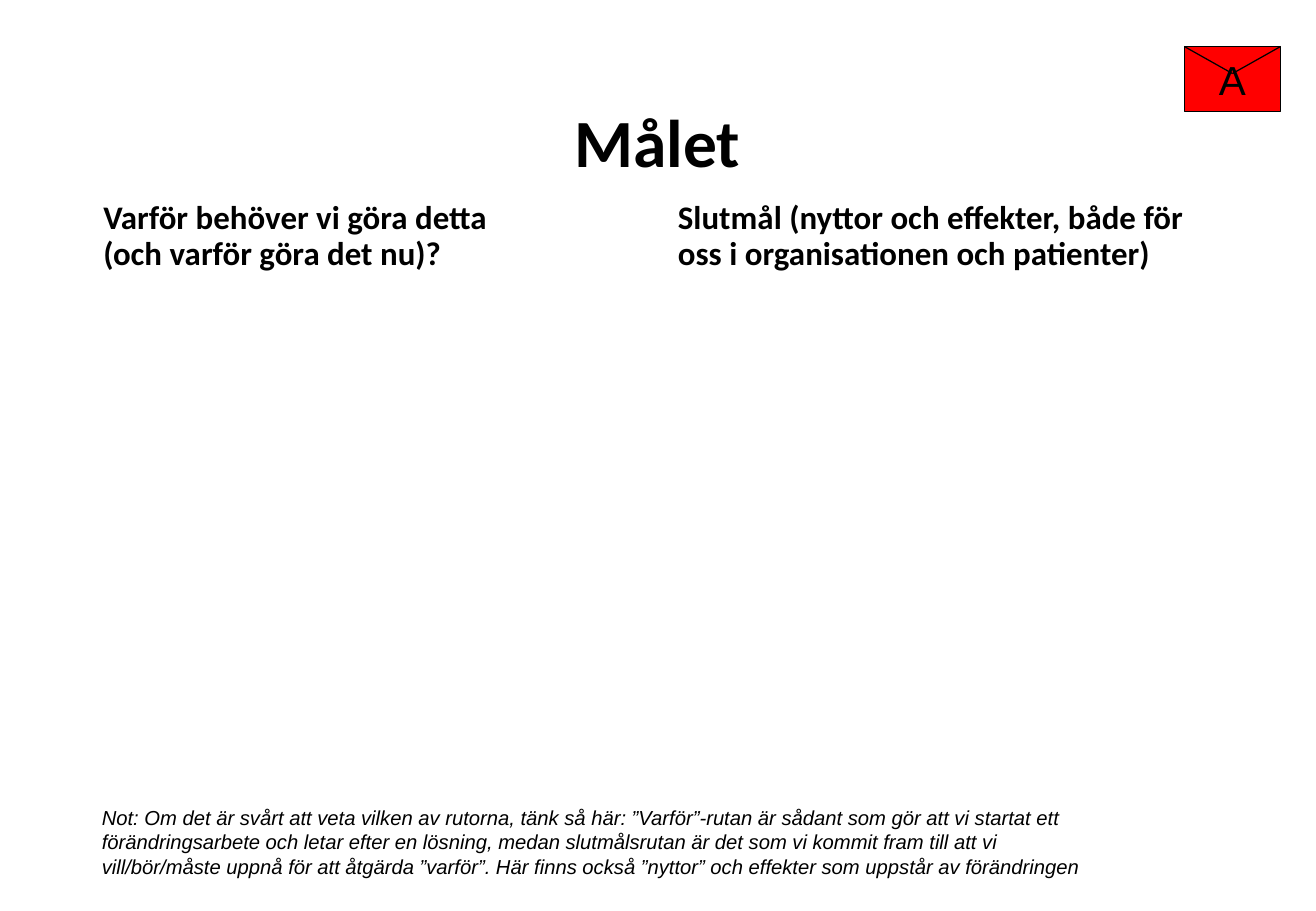
"""Builds the goal slide with two headed areas, a note and an envelope mark."""
from lxml import etree
from pptx import Presentation
from pptx import util as u
from pptx.dml.color import RGBColor
from pptx.enum import shapes, text
from pptx.oxml.ns import qn

GOAL = "Målet"
HEADINGS = [
    ("Varför behöver vi göra detta\v(och varför göra det nu)?", (54, 112.3, 329.8, 52.6)),
    ("Slutmål (nyttor och effekter, både för oss i organisationen och patienter)",
     (394.6, 112.3, 331.9, 52.6)),
]
NOTE = ("Not: Om det är svårt att veta vilken av rutorna, tänk så här: ”Varför”-rutan är sådant "
        "som gör att vi startat ett förändringsarbete och letar efter en lösning, medan "
        "slutmålsrutan är det som vi kommit fram till att vi vill/bör/måste uppnå för att "
        "åtgärda ”varför”. Här finns också ”nyttor” och effekter som uppstår av förändringen")
LETTER = "A"
GOAL_BOX = (53.3, 67.7, 672.5, 37.4)
NOTE_BOX = (53.3, 473.8, 614.2, 51.1)
ENVELOPE_BOX = (702, 27.6, 57, 38.4)
FLAP_DEPTH = 16

MIDDLE, BOTTOM, TOP = text.MSO_ANCHOR.MIDDLE, text.MSO_ANCHOR.BOTTOM, text.MSO_ANCHOR.TOP
CENTER, LEFT = text.PP_ALIGN.CENTER, text.PP_ALIGN.LEFT
THEME = {
    "ink": RGBColor(0, 0, 0),
    "envelope": RGBColor(255, 0, 0),
    "line": u.Pt(0.75),
    "goal": {"name": "Calibri", "size": u.Pt(40), "bold": True},
    "heading": {"name": "Calibri", "size": u.Pt(19.5), "bold": True},
    "note": {"name": "Arial", "size": u.Pt(12), "italic": True},
    "letter": {"name": "Arial", "size": u.Pt(24)},
}


def points(values):
    return [u.Pt(value) for value in values]


def apply(target, values):
    for key, value in values.items():
        setattr(target, key, value)


def place(part, box):
    apply(part, dict(zip(("left", "top", "width", "height"), points(box))))


def write(part, words, style, anchor, align, spacing=1.0, fit=text.MSO_AUTO_SIZE.NONE):
    frame = part.text_frame
    apply(frame, {"text": words, "word_wrap": True, "vertical_anchor": anchor, "auto_size": fit})
    paragraph = frame.paragraphs[0]
    apply(paragraph, {"alignment": align, "line_spacing": spacing, "space_before": u.Pt(0)})
    for run in paragraph.runs:
        apply(run.font, THEME[style])
        run.font.color.rgb = THEME["ink"]


def outline(part):
    part.line.color.rgb = THEME["ink"]
    part.line.width = THEME["line"]


def draw_envelope(slide):
    left, top, width, height = ENVELOPE_BOX
    group = slide.shapes.add_group_shape()
    envelope = group.shapes.add_shape(shapes.MSO_SHAPE.RECTANGLE, *points(ENVELOPE_BOX))
    envelope.shadow.inherit = False
    envelope.fill.solid()
    envelope.fill.fore_color.rgb = THEME["envelope"]
    outline(envelope)
    apply(envelope.text_frame, dict.fromkeys(
        ("margin_left", "margin_top", "margin_right", "margin_bottom"), 0))
    write(envelope, LETTER, "letter", MIDDLE, CENTER)
    for corner in (left, left + width):
        flap = group.shapes.add_connector(
            shapes.MSO_CONNECTOR.STRAIGHT,
            *points((corner, top, left + width / 2, top + FLAP_DEPTH)))
        outline(flap)
        etree.SubElement(flap.element.spPr, qn("a:effectLst"))


def main():
    deck = Presentation()
    apply(deck, {"slide_width": u.Pt(780), "slide_height": u.Pt(540)})
    slide = deck.slides.add_slide(deck.slide_layouts[4])
    goal, left_heading, left_area, right_heading, right_area = slide.placeholders
    for area in (left_area, right_area):
        area.element.getparent().remove(area.element)

    place(goal, GOAL_BOX)
    write(goal, GOAL, "goal", MIDDLE, CENTER, 0.9)
    for heading, (words, box) in zip((left_heading, right_heading), HEADINGS):
        place(heading, box)
        write(heading, words, "heading", BOTTOM, LEFT, 0.9)

    note = slide.shapes.add_textbox(*points(NOTE_BOX))
    write(note, NOTE, "note", TOP, LEFT, fit=text.MSO_AUTO_SIZE.SHAPE_TO_FIT_TEXT)
    draw_envelope(slide)
    deck.save("out.pptx")


if __name__ == "__main__":
    main()
